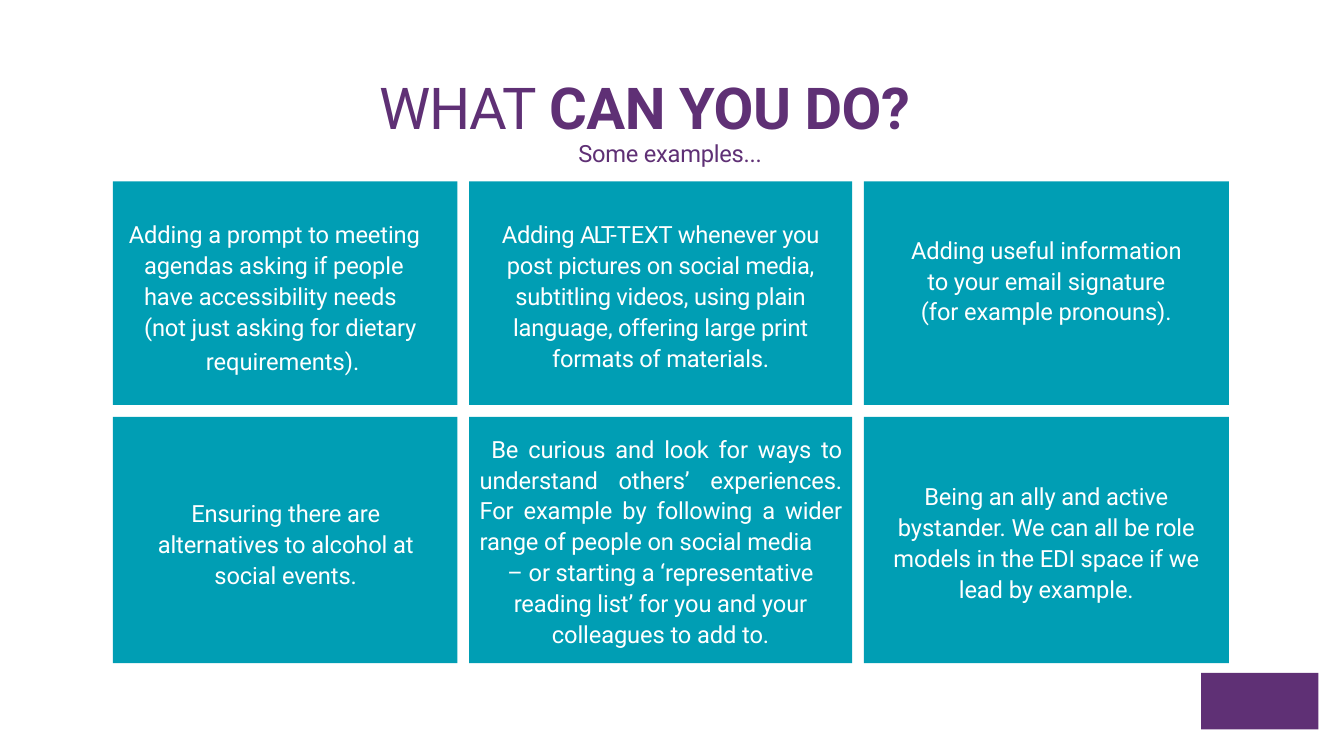
from dataclasses import dataclass

from pptx import Presentation
from pptx.dml.color import RGBColor
from pptx.enum.shapes import MSO_SHAPE
from pptx.enum.text import MSO_ANCHOR, MSO_AUTO_SIZE, PP_ALIGN
from pptx.util import Cm, Pt

PURPLE = RGBColor(0x5F, 0x30, 0x75)
TEAL = RGBColor(0x00, 0x9E, 0xB4)
WHITE = RGBColor(0xFF, 0xFF, 0xFF)
FONT = "Roboto"
TITLE_ONLY = 5
RECTANGLE = MSO_SHAPE.RECTANGLE
TOP = MSO_ANCHOR.TOP
NO_AUTOFIT = MSO_AUTO_SIZE.NONE
LEFT, CENTER, JUSTIFY = PP_ALIGN.LEFT, PP_ALIGN.CENTER, PP_ALIGN.JUSTIFY

GRID_LEFT, GRID_TOP, GAP = 2.69, 4.32, 0.28
COLUMN_WIDTHS = (8.2, 9.12, 8.69)
ROW_HEIGHTS = (5.33, 5.87)


@dataclass
class CardText:
    """Paragraph runs as (text, tracking in points); indents in cm."""
    runs: tuple
    left: float
    right: float
    first: float = 0
    align: PP_ALIGN = CENTER
    space_before: float = 0


# Each card: text offset from its top in cm, then its paragraphs; row by row.
CARDS = (
    (0.86, (
        CardText((("Adding a prompt to meeting agendas asking if people have "
                   "accessibility needs (not just asking for dietary", -0.05),),
                 0.74, 0.6, -0.36, LEFT),
        CardText((("requirements).", 0),), 2.21, 0, align=LEFT, space_before=1.8),
    )),
    (0.86, (
        CardText((("Adding ", -0.2), ("ALT-", -1.4),
                  ("TEXT whenever you post pictures on social media, subtitling "
                   "videos, using plain language, offering large print formats "
                   "of materials.", -0.13)), 0.51, 0.51),
    )),
    (1.23, (
        CardText((("Adding useful information to your email signature "
                   "(for example pronouns).", -0.05),), 1.07, 1.07),
    )),
    (1.89, (
        CardText((("Ensuring there are alternatives to alcohol at "
                   "social events.", -0.05),), 0.94, 0.91),
    )),
    (0.36, (
        CardText((("Be curious and look for ways to understand others’ "
                   "experiences. For example by following a wider range of "
                   "people on social media", -0.05),),
                 0.25, 0.23, 0.28, JUSTIFY),
        CardText((("– or starting a ‘representative reading list’ for you and "
                   "your colleagues to add to.", -0.05),), 0.84, 0.84),
    )),
    (1.5, (
        CardText((("Being an ally and active bystander. We can all be role "
                   "models in the EDI space if we lead by example.", -0.05),),
                 0.53, 0.53),
    )),
)


def prepare_frame(shape, top_margin=0):
    frame = shape.text_frame
    frame.auto_size = NO_AUTOFIT
    frame.word_wrap = True
    frame.vertical_anchor = TOP
    frame.margin_left = frame.margin_right = frame.margin_bottom = 0
    frame.margin_top = Cm(top_margin)
    return frame


def add_run(paragraph, text, tracking):
    run = paragraph.add_run()
    run.text = text
    run._r.get_or_add_rPr().set("spc", str(round(tracking * 100)))
    return run


def set_font(paragraph, size, color):
    paragraph.font.name = FONT
    paragraph.font.size = Pt(size)
    paragraph.font.color.rgb = color


def add_block(slide, left, top, width, height, color):
    block = slide.shapes.add_shape(RECTANGLE, Cm(left), Cm(top), Cm(width), Cm(height))
    block.shadow.inherit = False
    block.fill.solid()
    block.fill.fore_color.rgb = color
    block.line.fill.background()
    return block


def add_card(slide, left, top, width, height, text_offset, texts):
    card = add_block(slide, left, top, width, height, TEAL)
    frame = prepare_frame(card, text_offset)
    for index, text in enumerate(texts):
        paragraph = frame.add_paragraph() if index else frame.paragraphs[0]
        paragraph.alignment = text.align
        paragraph.line_spacing = 1.09
        paragraph.space_before = Pt(text.space_before)
        properties = paragraph._p.get_or_add_pPr()
        properties.set("marL", str(Cm(text.left)))
        properties.set("marR", str(Cm(text.right)))
        properties.set("indent", str(Cm(text.first)))
        set_font(paragraph, 16, WHITE)
        for words, tracking in text.runs:
            add_run(paragraph, words, tracking)


def add_card_grid(slide, left, top):
    cards = iter(CARDS)
    for row, height in enumerate(ROW_HEIGHTS):
        card_top = top + sum(ROW_HEIGHTS[:row]) + row * GAP
        for column, width in enumerate(COLUMN_WIDTHS):
            card_left = left + sum(COLUMN_WIDTHS[:column]) + column * GAP
            add_card(slide, card_left, card_top, width, height, *next(cards))


def add_heading(slide, left, top, width):
    title = slide.shapes.title
    title.left, title.top = Cm(left), Cm(top)
    title.width, title.height = Cm(width), Cm(1.73)
    paragraph = prepare_frame(title, 0.03).paragraphs[0]
    paragraph.alignment = LEFT
    paragraph.line_spacing = 1.0
    paragraph.space_before = Pt(0)
    set_font(paragraph, 39, PURPLE)
    add_run(paragraph, "WHAT ", -0.9)
    add_run(paragraph, "CAN YOU DO?", -0.3).font.bold = True

    subtitle = slide.shapes.add_textbox(
        Cm(left + 4.73), Cm(top + 1.6), Cm(4.7), Cm(0.74))
    paragraph = prepare_frame(subtitle, 0.03).paragraphs[0]
    set_font(paragraph, 16, PURPLE)
    add_run(paragraph, "Some examples...", -0.15)


def main():
    presentation = Presentation()
    presentation.slide_width, presentation.slide_height = Cm(32), Cm(18.01)
    slide = presentation.slides.add_slide(presentation.slide_layouts[TITLE_ONLY])
    add_heading(slide, 9.04, 1.68, 13.94)
    add_card_grid(slide, GRID_LEFT, GRID_TOP)
    add_block(slide, 28.6, 16.03, 2.79, 1.35, PURPLE)
    presentation.save("out.pptx")


if __name__ == "__main__":
    main()
